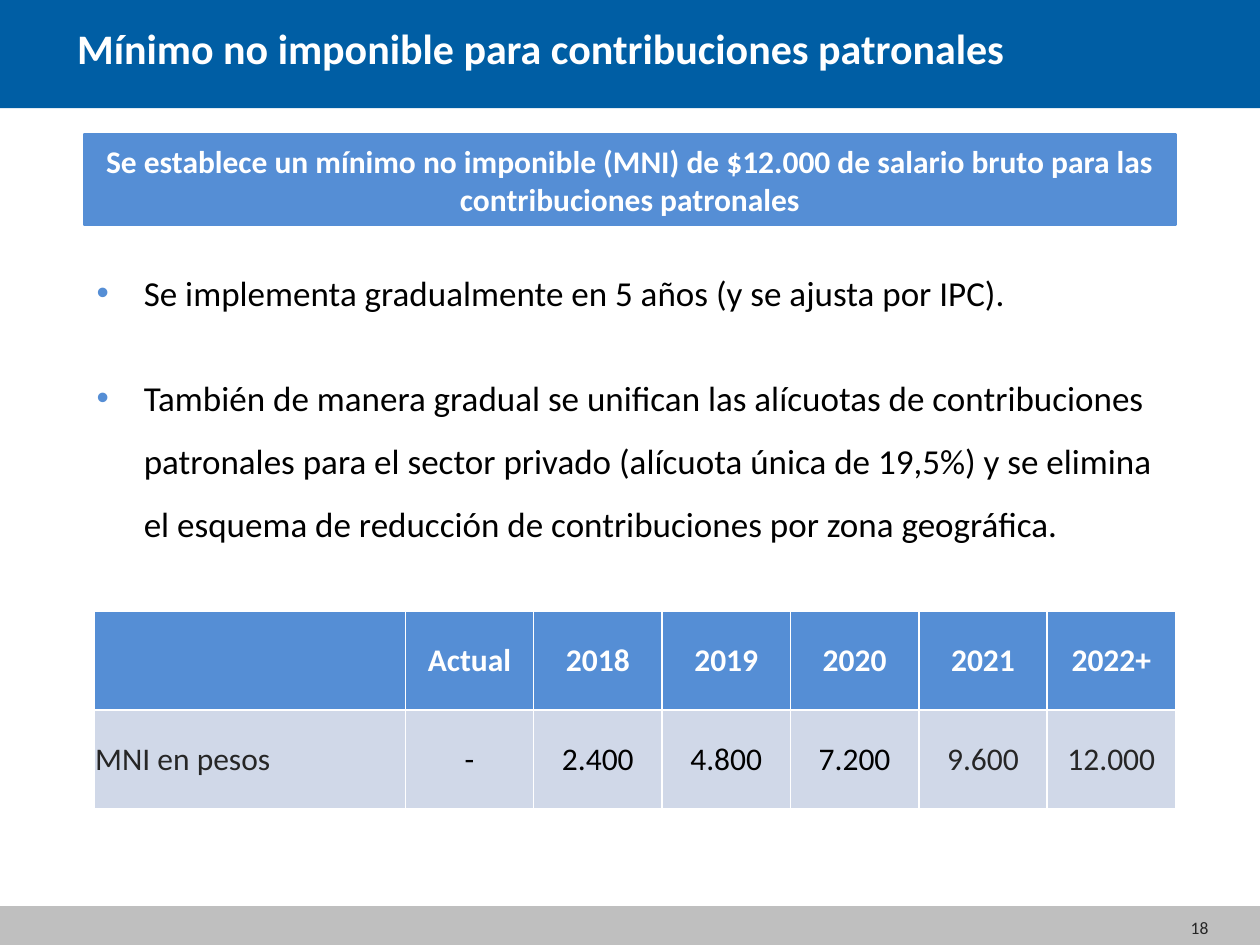
from dataclasses import dataclass

from lxml import etree
from pptx import Presentation
from pptx import util as u
from pptx.dml.color import RGBColor
from pptx.enum import shapes, text
from pptx.oxml import ns


@dataclass(frozen=True)
class Theme:
    font: str = "Calibri"
    navy: str = "005EA4"
    blue: str = "558ED5"
    pale: str = "D0D8E8"
    gray: str = "BFBFBF"
    white: str = "FFFFFF"
    black: str = "000000"
    ink: str = "262626"
    title: int = 24
    body: int = 20
    label: int = 18
    small: int = 10


THEME = Theme()
HEADERS = ["", "Actual", "2018", "2019", "2020", "2021", "2022+"]
VALUES = ["MNI en pesos", "-", "2.400", "4.800", "7.200", "9.600", "12.000"]
BULLETS = [
    "Se implementa gradualmente en 5 años (y se ajusta por IPC).",
    "También de manera gradual se unifican las alícuotas de contribuciones "
    "patronales para el sector privado (alícuota única de 19,5%) y se elimina "
    "el esquema de reducción de contribuciones por zona geográfica.",
]


def cm_box(*lengths):
    return [u.Cm(length) for length in lengths]


def style(para, size, color, bold=False, align=text.PP_ALIGN.LEFT):
    para.alignment = align
    for span in para.runs:
        span.font.name = THEME.font
        span.font.size = u.Pt(size)
        span.font.bold = bold
        span.font.color.rgb = RGBColor.from_string(color)


def add_bar(page, box, color, line_width=0):
    bar = page.shapes.add_shape(shapes.MSO_SHAPE.RECTANGLE, *box)
    bar.shadow.inherit = False
    bar.fill.solid()
    bar.fill.fore_color.rgb = RGBColor.from_string(color)
    if line_width:
        bar.line.color.rgb = RGBColor.from_string(color)
        bar.line.width = u.Pt(line_width)
    else:
        bar.line.fill.background()
    return bar


def add_header(page, box):
    left, top, width, height = box
    add_bar(page, box, THEME.navy)
    title = page.shapes.title
    title.left, title.top = left + u.Cm(1.3), top + u.Cm(0.33)
    title.width, title.height = u.Cm(22), u.Cm(1.27)
    frame = title.text_frame
    frame.text = "Mínimo no imponible para contribuciones patronales"
    frame.auto_size = text.MSO_AUTO_SIZE.NONE
    frame.vertical_anchor = text.MSO_ANCHOR.TOP
    style(frame.paragraphs[0], THEME.title, THEME.white, bold=True)
    # Bring the title in front of the bar
    title.element.getparent().append(title.element)


def add_footer(page, box):
    left, top, width, height = box
    add_bar(page, box, THEME.gray, 2)
    number_width = u.Cm(5.92)
    number = page.shapes.add_textbox(
        left + width - number_width - u.Cm(0.79), top - u.Cm(0.12),
        number_width, u.Cm(1.02))
    frame = number.text_frame
    frame.word_wrap = True
    frame.vertical_anchor = text.MSO_ANCHOR.MIDDLE
    frame.text = "18"
    style(frame.paragraphs[0], THEME.small, THEME.ink, align=text.PP_ALIGN.RIGHT)


def add_banner(page, box):
    frame = add_bar(page, box, THEME.blue, 2).text_frame
    frame.word_wrap = True
    frame.vertical_anchor = text.MSO_ANCHOR.MIDDLE
    frame.text = ("Se establece un mínimo no imponible (MNI) de $12.000 de salario "
                  "bruto para las contribuciones patronales")
    style(frame.paragraphs[0], THEME.label, THEME.white, True, text.PP_ALIGN.CENTER)


def add_bullets(page, box):
    frame = page.shapes.add_textbox(*box).text_frame
    frame.word_wrap = True
    frame.text = "\n".join(BULLETS)
    for para in frame.paragraphs:
        style(para, THEME.body, THEME.black)
        para.line_spacing = 1.5
        para.space_after = u.Pt(24)
        # Hanging indent with a coloured bullet
        props = para._p.get_or_add_pPr()
        indent = u.Cm(0.95)
        props.set("marL", str(indent))
        props.set("indent", str(-indent))
        color = etree.SubElement(props, ns.qn("a:buClr"))
        etree.SubElement(color, ns.qn("a:srgbClr"), val=THEME.blue)
        etree.SubElement(props, ns.qn("a:buFont"), typeface="Arial")
        etree.SubElement(props, ns.qn("a:buChar"), char="•")


def format_cell(cell, fill):
    cell.vertical_anchor = text.MSO_ANCHOR.MIDDLE
    cell.margin_left = cell.margin_right = cell.margin_top = u.Cm(0.02)
    cell.margin_bottom = 0
    # Borders come before the fill in the cell properties
    props = cell._tc.get_or_add_tcPr()
    for side in ("lnL", "lnR", "lnT", "lnB"):
        border = etree.SubElement(props, ns.qn(f"a:{side}"), w=str(u.Pt(1)))
        solid = etree.SubElement(border, ns.qn("a:solidFill"))
        etree.SubElement(solid, ns.qn("a:srgbClr"), val=THEME.white)
    cell.fill.solid()
    cell.fill.fore_color.rgb = RGBColor.from_string(fill)


def add_mni_table(page, box):
    left, top, width, height = box
    table = page.shapes.add_table(2, len(HEADERS), *box).table
    label_width = u.Cm(6.27)
    year_width = (width - label_width) // (len(HEADERS) - 1)
    for index, column in enumerate(table.columns):
        column.width = year_width if index else label_width
    for row in table.rows:
        row.height = height // 2

    dark_columns = (0, 5, 6)
    for row, words in enumerate((HEADERS, VALUES)):
        for column, word in enumerate(words):
            cell = table.cell(row, column)
            format_cell(cell, THEME.pale if row else THEME.blue)
            cell.text_frame.text = word
            if row == 0:
                color = THEME.white
            else:
                color = THEME.ink if column in dark_columns else THEME.black
            align = text.PP_ALIGN.CENTER if column else text.PP_ALIGN.LEFT
            style(cell.text_frame.paragraphs[0], THEME.label, color, row == 0, align)


def main():
    deck = Presentation()
    deck.slide_width, deck.slide_height = u.Cm(25.4), u.Cm(19.05)
    page = deck.slides.add_slide(deck.slide_layouts.get_by_name("Title Only"))
    add_header(page, cm_box(0, 0, 25.4, 2.18))
    add_footer(page, cm_box(0, 18.31, 25.4, 0.74))
    add_banner(page, cm_box(1.7, 2.72, 22, 1.8))
    add_bullets(page, cm_box(1.7, 4.93, 22, 6.25))
    add_mni_table(page, cm_box(1.9, 12.32, 21.8, 3.99))
    deck.save("out.pptx")


if __name__ == "__main__":
    main()
